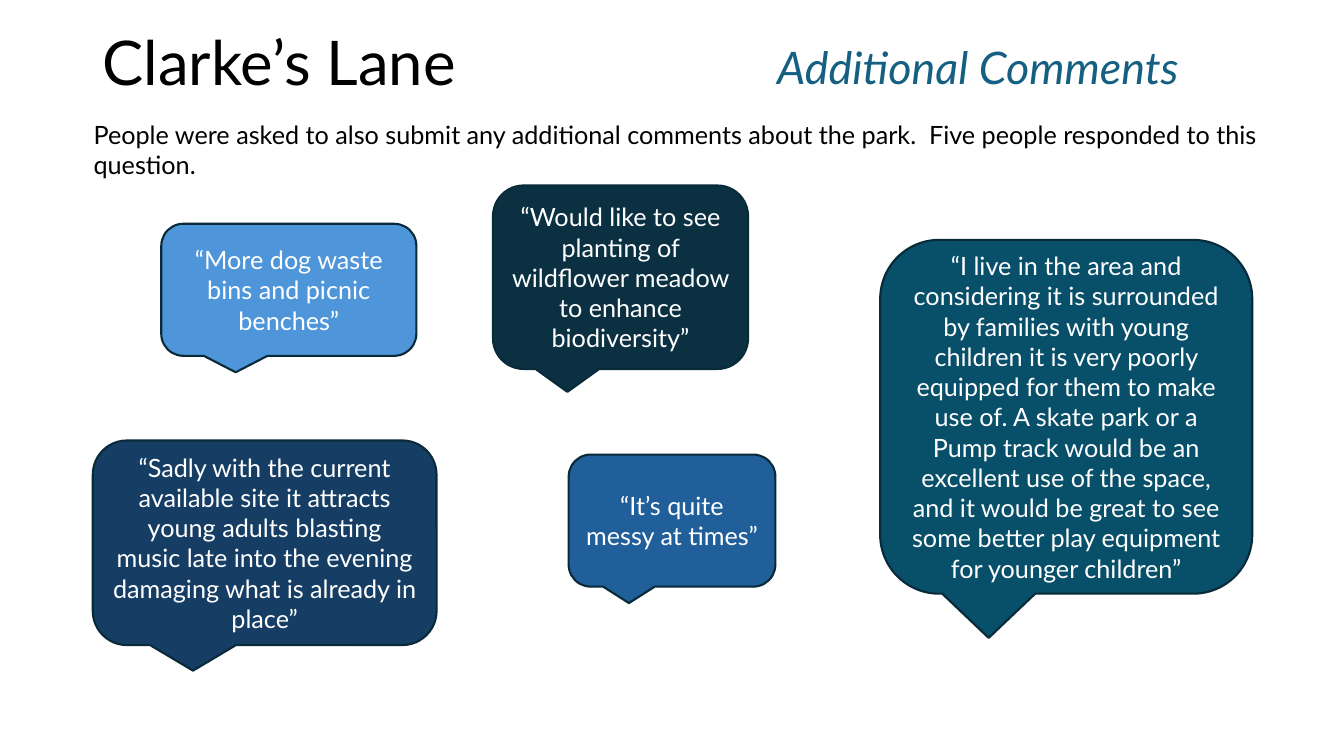
from pptx import Presentation
from pptx.dml.color import RGBColor
from pptx.enum.shapes import MSO_SHAPE
from pptx.enum.text import MSO_ANCHOR, PP_ALIGN
from pptx.util import Pt

CALLOUT = MSO_SHAPE.ROUNDED_RECTANGULAR_CALLOUT
MIDDLE, TOP = MSO_ANCHOR.MIDDLE, MSO_ANCHOR.TOP
CENTER, LEFT = PP_ALIGN.CENTER, PP_ALIGN.LEFT

FONT = "Lato"
PX = 9144  # 100 px to the inch

BLACK = RGBColor(0x00, 0x00, 0x00)
WHITE = RGBColor(0xFF, 0xFF, 0xFF)
TEAL = RGBColor(0x15, 0x60, 0x82)
OUTLINE = RGBColor(0x09, 0x2A, 0x39)
MID_BLUE = RGBColor(0x21, 0x5F, 0x9A)
LIGHT_BLUE = RGBColor(0x4E, 0x95, 0xD9)
DEEP_TEAL = RGBColor(0x08, 0x4F, 0x6A)
NAVY = RGBColor(0x16, 0x3E, 0x64)
DARK_TEAL = RGBColor(0x0B, 0x30, 0x41)


def write(shape, text, size, color, align=LEFT, anchor=TOP):
    frame = shape.text_frame
    frame.word_wrap = True
    frame.vertical_anchor = anchor
    frame.text = text
    paragraph = frame.paragraphs[0]
    paragraph.alignment = align
    font = paragraph.runs[0].font
    font.name, font.size, font.color.rgb = FONT, Pt(size), color
    return paragraph


prs = Presentation()
prs.slide_width, prs.slide_height = 1333 * PX, 750 * PX
slide = prs.slides.add_slide(prs.slide_layouts[6])

# Heading: park name, section and introduction
park_name = slide.shapes.add_textbox(92 * PX, -7 * PX, 1150 * PX, 145 * PX)
write(park_name, "Clarke’s Lane", 44, BLACK, anchor=MIDDLE).line_spacing = 0.9

section = slide.shapes.add_textbox(761 * PX, 34 * PX, 548 * PX, 64 * PX)
write(section, "Additional Comments", 32, TEAL).runs[0].font.italic = True

introduction = slide.shapes.add_textbox(83 * PX, 113 * PX, 1204 * PX, 71 * PX)
write(introduction, "People were asked to also submit any additional comments about the park.  "
      "Five people responded to this question.", 18, BLACK)

# Comments in speech bubbles: left, top, width, height, fill, quote
comments = [
    (564, 451, 205, 131, MID_BLUE, "“It’s quite messy at times”"),
    (160, 222, 253, 131, LIGHT_BLUE, "“More dog waste bins and picnic benches”"),
    (873, 238, 369, 351, DEEP_TEAL,
     "“I live in the area and considering it is surrounded by families with young "
     "children it is very poorly equipped for them to make use of. A skate park or a "
     "Pump track would be an excellent use of the space, and it would be great to see "
     "some better play equipment for younger children”"),
    (92, 437, 341, 203, NAVY,
     "“Sadly with the current available site it attracts young adults blasting music "
     "late into the evening damaging what is already in place”"),
    (489, 184, 253, 182, DARK_TEAL,
     "“Would like to see planting of wildflower meadow to enhance biodiversity”"),
]
for left, top, width, height, fill, quote in comments:
    bubble = slide.shapes.add_shape(CALLOUT, left * PX, top * PX, width * PX, height * PX)
    bubble.shadow.inherit = False
    bubble.fill.solid()
    bubble.fill.fore_color.rgb = fill
    bubble.line.color.rgb = OUTLINE
    bubble.line.width = Pt(1.5)
    write(bubble, quote, 18, WHITE, CENTER, MIDDLE)

prs.save("out.pptx")
